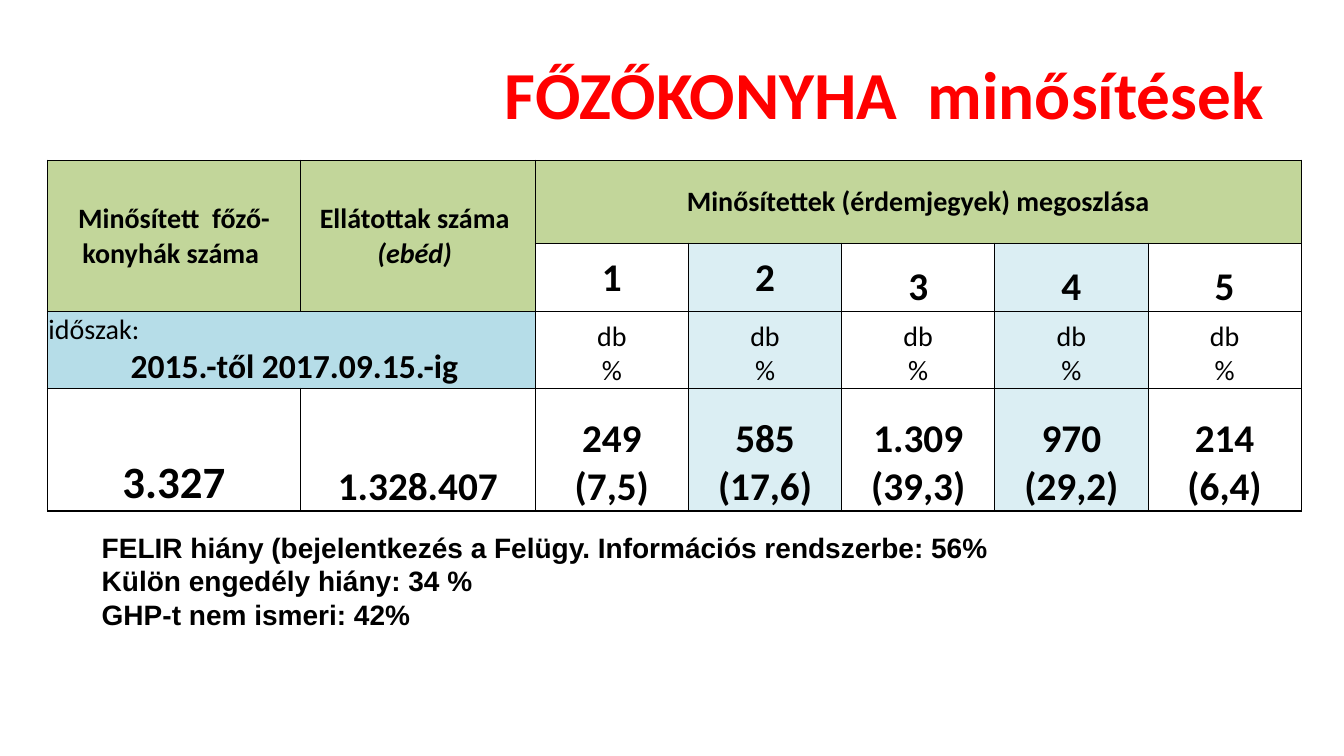
from dataclasses import dataclass

from lxml import etree
from pptx import Presentation
from pptx.dml.color import RGBColor
from pptx.enum.text import MSO_ANCHOR, PP_ALIGN
from pptx.oxml.ns import qn
from pptx.util import Inches, Pt

LEFT, MID, RIGHT = PP_ALIGN.LEFT, PP_ALIGN.CENTER, PP_ALIGN.RIGHT
TOP, CENTER, BOTTOM = MSO_ANCHOR.TOP, MSO_ANCHOR.MIDDLE, MSO_ANCHOR.BOTTOM
WIDE, HIGH = Inches(13.33), Inches(7.5)


@dataclass(frozen=True)
class Theme:
    """Colours, fonts and type sizes of the slide."""
    red: str = "FF0000"
    ink: str = "000000"
    green: str = "C2D69A"
    blue: str = "B6DDE8"
    pale: str = "DBEEF3"
    sans: str = "Calibri"
    plain: str = "Arial"
    title: int = 48
    total: int = 32
    mark: int = 28
    date: int = 24
    body: int = 20
    thin: float = 0.5
    thick: float = 1


THEME = Theme()
COLS = (2.51, 2.33) + (1.52,) * 5
ROWS = (0.82, 0.68, 0.76, 1.22)
MARKS = (("1", "249", "(7,5)"), ("2", "585", "(17,6)"), ("3", "1.309", "(39,3)"),
         ("4", "970", "(29,2)"), ("5", "214", "(6,4)"))
NOTES = ("FELIR hiány (bejelentkezés a Felügy. Információs rendszerbe: 56%",
         "Külön engedély hiány: 34 %", "GHP-t nem ismeri: 42%")


def share(left, top, width, height):
    """Turn percentages of the slide into a box."""
    return [round(size * part / 100) for size, part in
            zip((WIDE, HIGH, WIDE, HIGH), (left, top, width, height))]


def write(frame, lines, size=THEME.body, font=THEME.sans, color=THEME.ink,
          bold=True, italic=False, align=MID, space=None):
    """Fill a frame with lines, each a string or a list of (text, format) runs."""
    frame.word_wrap = True
    for i, line in enumerate(lines):
        para = frame.paragraphs[0] if i == 0 else frame.add_paragraph()
        runs = [(line, {})] if isinstance(line, str) else line
        para.alignment = runs[0][1].get("align", align)
        if space:
            para.line_spacing = space
        for text, form in runs:
            run = para.add_run()
            run.text = text
            run.font.name = font
            run.font.size = Pt(form.get("size", size))
            run.font.bold = form.get("bold", bold)
            run.font.italic = form.get("italic", italic)
            run.font.color.rgb = RGBColor.from_string(color)


def label(slide, box, lines, anchor=TOP, **form):
    """Place a text box."""
    frame = slide.shapes.add_textbox(*box).text_frame
    frame.vertical_anchor = anchor
    write(frame, lines, **form)


def border(cell, row, col):
    """Draw cell edges, thicker along the rim of the table."""
    rims = {"L": col == 0, "R": col == len(COLS) - 1,
            "T": row == 0, "B": row == len(ROWS) - 1}
    props = cell._tc.get_or_add_tcPr()
    for side, rim in rims.items():
        width = Pt(THEME.thick if rim else THEME.thin)
        line = etree.SubElement(props, qn("a:ln" + side), w=str(width))
        fill = etree.SubElement(line, qn("a:solidFill"))
        etree.SubElement(fill, qn("a:srgbClr"), val=THEME.ink)


def put(cell, lines, fill=None, anchor=BOTTOM, **form):
    """Fill one table cell."""
    cell.margin_left = cell.margin_right = cell.margin_top = Inches(0.01)
    cell.margin_bottom = 0
    cell.vertical_anchor = anchor
    if fill:
        cell.fill.solid()
        cell.fill.fore_color.rgb = RGBColor.from_string(fill)
    write(cell.text_frame, lines, **form)


def ratings(slide, box):
    """Build the table of kitchen ratings inside a box."""
    left, top, width, height = box
    table = slide.shapes.add_table(len(ROWS), len(COLS), *box).table
    table.first_row = table.horz_banding = False
    for part, col in zip(COLS, table.columns):
        col.width = round(width * part / sum(COLS))
    for part, row in zip(ROWS, table.rows):
        row.height = round(height * part / sum(ROWS))
    for r in range(len(ROWS)):
        for c in range(len(COLS)):
            border(table.cell(r, c), r, c)
            table.cell(r, c).fill.background()
    for start, end in (((0, 0), (1, 0)), ((0, 1), (1, 1)),
                       ((0, 2), (0, 6)), ((2, 0), (2, 1))):
        table.cell(*start).merge(table.cell(*end))

    heads = (["Minősített  főző- konyhák száma "],
             [[("Ellátottak száma  ", {}), ("(ebéd) ", {"italic": True})]],
             ["Minősítettek (érdemjegyek) megoszlása"])
    for c, lines in enumerate(heads):
        put(table.cell(0, c), lines, THEME.green, CENTER)
    put(table.cell(2, 0),
        [[("időszak:", {"bold": False, "align": LEFT})],
         [(" ", {"bold": False}), ("2015.-től 2017.09.15.-ig", {"size": THEME.date})]],
        THEME.blue)
    put(table.cell(3, 0), ["3.327"], size=THEME.total)
    put(table.cell(3, 1), ["1.328.407"], size=THEME.mark)
    for i, (mark, count, rate) in enumerate(MARKS):
        col, fill = i + 2, THEME.pale if i % 2 else None
        put(table.cell(1, col), [mark], fill, CENTER if i < 2 else BOTTOM,
            size=THEME.mark)
        put(table.cell(2, col), ["db", "%"], fill, bold=False)
        put(table.cell(3, col), [count, rate], fill, size=THEME.mark)


def main():
    """Build and save the slide."""
    deck = Presentation()
    deck.slide_width, deck.slide_height = WIDE, HIGH
    slide = deck.slides.add_slide(deck.slide_layouts[6])
    label(slide, share(4.8, 4.53, 90, 16.67), ["FŐZŐKONYHA  minősítések"], CENTER,
          size=THEME.title, color=THEME.red, align=RIGHT, space=0.9)
    ratings(slide, share(3.53, 21.2, 93.3, 46.4))
    label(slide, share(6.83, 69.47, 72.32, 14.8), NOTES, font=THEME.plain, align=LEFT)
    deck.save("out.pptx")


if __name__ == "__main__":
    main()
